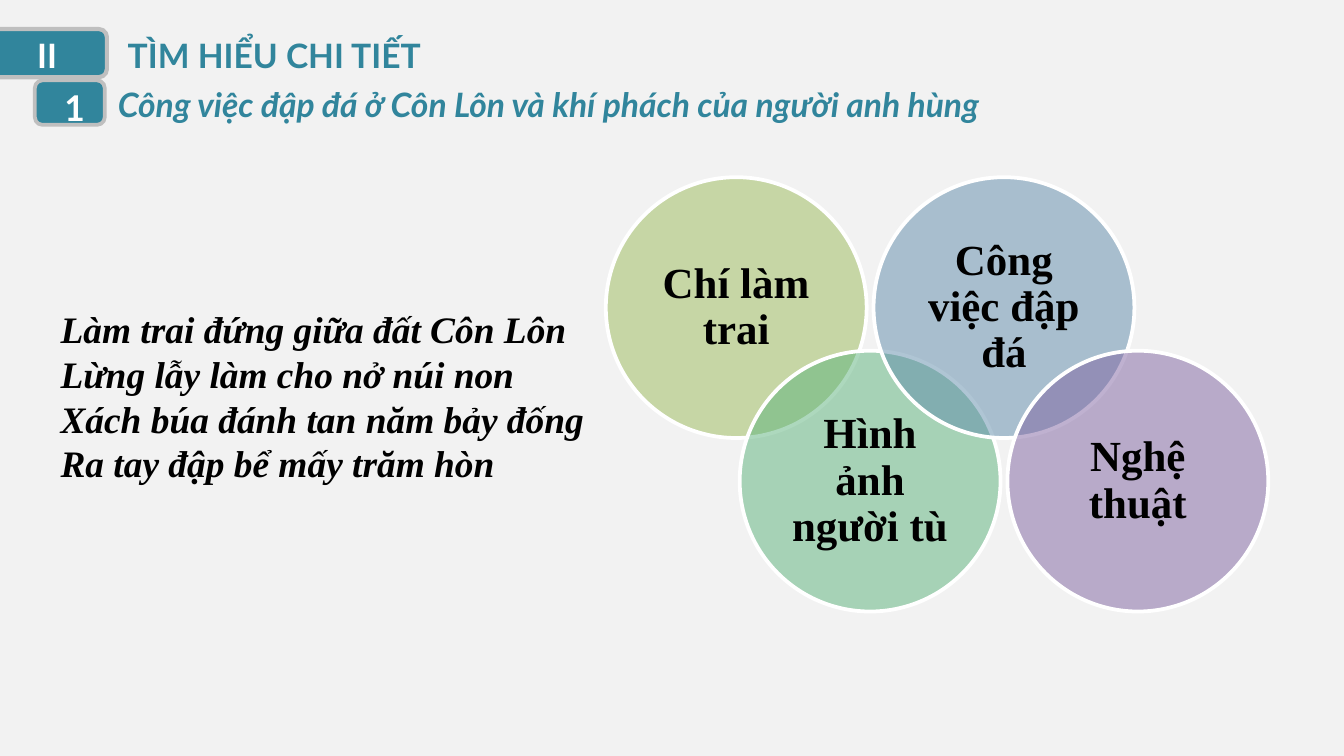
from dataclasses import dataclass

from lxml import etree
from pptx import Presentation
from pptx.dml.color import RGBColor
from pptx.enum.shapes import MSO_SHAPE
from pptx.enum.text import MSO_ANCHOR, MSO_AUTO_SIZE, PP_ALIGN
from pptx.oxml.ns import qn
from pptx.util import Cm, Pt

LEFT, CENTER = PP_ALIGN.LEFT, PP_ALIGN.CENTER
TOP, MIDDLE = MSO_ANCHOR.TOP, MSO_ANCHOR.MIDDLE
NO_AUTOFIT = MSO_AUTO_SIZE.NONE
OVAL, ROUNDED = MSO_SHAPE.OVAL, MSO_SHAPE.ROUNDED_RECTANGLE
TAB = MSO_SHAPE.ROUND_2_SAME_RECTANGLE


@dataclass(frozen=True)
class Theme:
    background: str = "F2F2F2"
    accent: str = "31859C"
    badge_line: str = "BFBFBF"
    white: str = "FFFFFF"
    black: str = "000000"
    circles: tuple = ("9BBB59", "5CB37C", "608CAB", "8064A2")
    heading_font: str = "Lato"
    verse_font: str = "Times New Roman"
    heading_size: int = 18
    number_size: int = 19
    verse_size: int = 20
    circle_size: int = 23


def color(value):
    return RGBColor.from_string(value)


def write_text(shape, text, *, font, size, fill, italic=False, align=LEFT,
               anchor=TOP, wrap=True, spacing=1.0, inset=None):
    """Fill a shape with bold text, one paragraph per line and no bullets."""
    frame = shape.text_frame
    frame.text = text
    frame.word_wrap = wrap
    frame.auto_size = NO_AUTOFIT
    frame.vertical_anchor = anchor
    if inset is not None:
        frame.margin_left = frame.margin_right = Cm(inset)
        frame.margin_top = frame.margin_bottom = Cm(inset)
    for paragraph in frame.paragraphs:
        paragraph.alignment = align
        paragraph.line_spacing = spacing
        paragraph.space_before = Pt(0)
        if shape.is_placeholder:
            properties = paragraph._p.get_or_add_pPr()
            properties.set("marL", "0")
            properties.set("indent", "0")
            etree.SubElement(properties, qn("a:buNone"))
        paragraph.font.name = font
        paragraph.font.size = Pt(size)
        paragraph.font.bold = True
        paragraph.font.italic = italic
        paragraph.font.color.rgb = color(fill)


class SlideBuilder:
    def __init__(self, slide, theme):
        self.slide = slide
        self.theme = theme
        slide.background.fill.solid()
        slide.background.fill.fore_color.rgb = color(theme.background)

    def placeholder(self, index, box, text, **text_format):
        shape = self.slide.placeholders[index]
        shape.left, shape.top, shape.width, shape.height = map(Cm, box)
        write_text(shape, text, **text_format)

    def text_box(self, box, text, **text_format):
        shape = self.slide.shapes.add_textbox(*map(Cm, box))
        write_text(shape, text, **text_format)

    def shape(self, kind, box, fill, line, line_width):
        shape = self.slide.shapes.add_shape(kind, *map(Cm, box))
        shape.shadow.inherit = False
        shape.fill.solid()
        shape.fill.fore_color.rgb = color(fill)
        shape.line.color.rgb = color(line)
        shape.line.width = Pt(line_width)
        return shape

    def badge(self, kind, box, line_width, rotation=0):
        shape = self.shape(kind, box, self.theme.accent,
                           self.theme.badge_line, line_width)
        shape.rotation = rotation

    def circle(self, left, top, diameter, fill, text):
        """Draw a half-transparent circle with a centred label."""
        shape = self.shape(OVAL, (left, top, diameter, diameter), fill,
                           self.theme.white, 2)
        fill_color = shape._element.spPr.find(qn("a:solidFill"))[0]
        etree.SubElement(fill_color, qn("a:alpha"), val="50000")
        write_text(shape, text, font=self.theme.verse_font,
                   size=self.theme.circle_size, fill=self.theme.black,
                   align=CENTER, anchor=MIDDLE, spacing=0.9, inset=0.25)


def main():
    theme = Theme()
    presentation = Presentation()
    presentation.slide_width, presentation.slide_height = Cm(25.4), Cm(14.29)
    slide = presentation.slides.add_slide(presentation.slide_layouts[1])
    builder = SlideBuilder(slide, theme)

    heading = dict(font=theme.heading_font, size=theme.heading_size,
                   fill=theme.accent)
    label = dict(heading, fill=theme.white, align=CENTER)

    builder.badge(TAB, (0.46, -0.1, 0.91, 2.21), 2.25, rotation=90)
    builder.text_box((0, 0.53, 1.78, 1.02), "II", **label)
    builder.placeholder(0, (2.16, 0.53, 7.14, 1.02),
                        "TÌM HIỂU CHI TIẾT", **heading)

    builder.text_box(
        (1.98, 1.47, 20.93, 1.02),
        "Công việc đập đá ở Côn Lôn và khí phách của người anh hùng",
        italic=True, **heading)
    builder.badge(ROUNDED, (0.66, 1.52, 1.32, 0.84), 2)
    builder.text_box((0.94, 1.5, 0.94, 1.07), "1", wrap=False,
                     **dict(label, size=theme.number_size))

    verse = ("Làm trai đứng giữa đất Côn Lôn",
             "Lừng lẫy làm cho nở núi non",
             "Xách búa đánh tan năm bảy đống",
             "Ra tay đập bể mấy trăm hòn")
    builder.placeholder(1, (0.89, 5.66, 11.35, 3.68), "\n".join(verse),
                        font=theme.verse_font, size=theme.verse_size,
                        fill=theme.black, italic=True)

    topics = ("Chí làm trai", "Hình ảnh người tù",
              "Công việc đập đá", "Nghệ thuật")
    row_tops = (3.35, 6.63)
    for index, (topic, fill) in enumerate(zip(topics, theme.circles)):
        builder.circle(11.45 + 2.53 * index, row_tops[index % 2], 4.93,
                       fill, topic)

    presentation.save("out.pptx")


if __name__ == "__main__":
    main()
